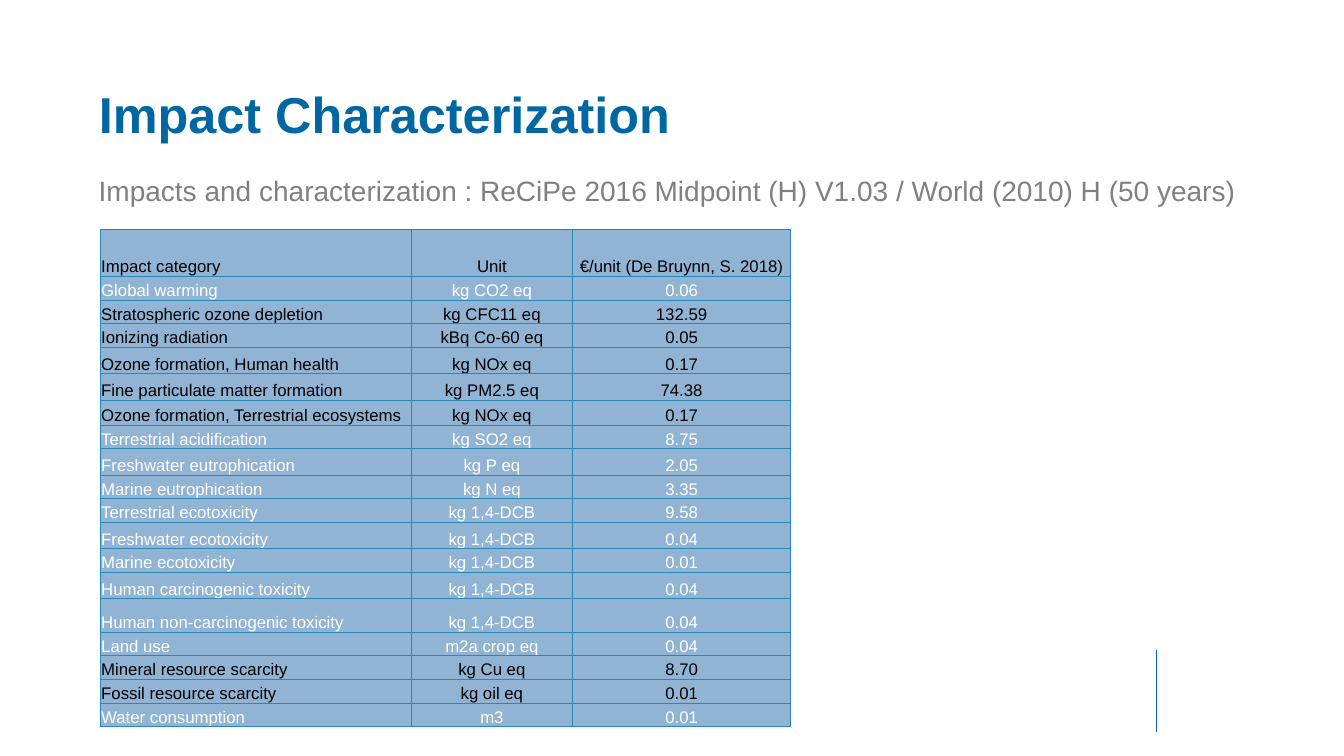
from lxml import etree
from pptx import Presentation, util as u
from pptx.dml.color import RGBColor
from pptx.enum import shapes, text
from pptx.oxml.ns import qn

BLACK, WHITE = "000000", "FFFFFF"
HEADER = ("Impact category", "Unit", "€/unit (De Bruynn, S. 2018)", 33.8, BLACK)
IMPACTS = [
    ("Global warming", "kg CO2 eq", "0.06", 16.9, WHITE),
    ("Stratospheric ozone depletion", "kg CFC11 eq", "132.59", 16.9, BLACK),
    ("Ionizing radiation", "kBq Co-60 eq", "0.05", 16.9, BLACK),
    ("Ozone formation, Human health", "kg NOx eq", "0.17", 18.8, BLACK),
    ("Fine particulate matter formation", "kg PM2.5 eq", "74.38", 18.8, BLACK),
    ("Ozone formation, Terrestrial ecosystems", "kg NOx eq", "0.17", 18, BLACK),
    ("Terrestrial acidification", "kg SO2 eq", "8.75", 16.9, WHITE),
    ("Freshwater eutrophication", "kg P eq", "2.05", 18.8, WHITE),
    ("Marine eutrophication", "kg N eq", "3.35", 16.9, WHITE),
    ("Terrestrial ecotoxicity", "kg 1,4-DCB", "9.58", 16.9, WHITE),
    ("Freshwater ecotoxicity", "kg 1,4-DCB", "0.04", 18.8, WHITE),
    ("Marine ecotoxicity", "kg 1,4-DCB", "0.01", 16.9, WHITE),
    ("Human carcinogenic toxicity", "kg 1,4-DCB", "0.04", 18.8, WHITE),
    ("Human non-carcinogenic toxicity", "kg 1,4-DCB", "0.04", 23.8, WHITE),
    ("Land use", "m2a crop eq", "0.04", 16.9, WHITE),
    ("Mineral resource scarcity", "kg Cu eq", "8.70", 16.9, BLACK),
    ("Fossil resource scarcity", "kg oil eq", "0.01", 16.9, BLACK),
    ("Water consumption", "m3", "0.01", 16.9, WHITE),
]


def colour(value):
    return RGBColor.from_string(value)


class SlideBuilder:
    """Draws styled elements on one slide, with lengths in points."""

    font = "Arial"
    blue, grey = "0067A3", "808080"
    cell_fill, cell_border = "92B4D4", "2A88B5"

    def __init__(self, slide):
        self.slide = slide

    def add_span(self, para, words, size, hue, bold=False, align=text.PP_ALIGN.LEFT):
        para.alignment = align
        span = para.add_run()
        span.text = words
        span.font.name, span.font.size = self.font, u.Pt(size)
        span.font.bold, span.font.color.rgb = bold, colour(hue)

    def fill_box(self, box, place, words, size, hue, bold=False):
        box.left, box.top, box.width, box.height = map(u.Pt, place)
        frame = box.text_frame
        frame.word_wrap = True
        frame.auto_size = text.MSO_AUTO_SIZE.NONE
        frame.vertical_anchor = text.MSO_ANCHOR.TOP
        para = frame.paragraphs[0]
        para.line_spacing, para.space_before = 0.9, u.Pt(0)
        self.add_span(para, words, size, hue, bold)

    def title(self, place, words):
        self.fill_box(self.slide.shapes.title, place, words, 36, self.blue, True)

    def subtitle(self, place, words):
        box = self.slide.shapes.add_textbox(*map(u.Pt, place))
        self.fill_box(box, place, words, 20, self.grey)

    def line(self, *ends):
        rule = self.slide.shapes.add_connector(
            shapes.MSO_CONNECTOR.STRAIGHT, *map(u.Pt, ends))
        rule.line.color.rgb, rule.line.width = colour(self.blue), u.Pt(0.5)
        etree.SubElement(rule._element.spPr, qn("a:effectLst"))

    def border(self, cell):
        properties = cell._tc.get_or_add_tcPr()
        for side in ("a:lnL", "a:lnR", "a:lnT", "a:lnB"):
            edge = etree.SubElement(properties, qn(side), w=str(u.Pt(0.5)))
            solid = etree.SubElement(edge, qn("a:solidFill"))
            etree.SubElement(solid, qn("a:srgbClr"), val=self.cell_border)

    def cell(self, cell, words, hue, align):
        self.border(cell)
        cell.fill.solid()
        cell.fill.fore_color.rgb = colour(self.cell_fill)
        cell.margin_left = cell.margin_right = cell.margin_top = u.Pt(0.7)
        cell.margin_bottom = u.Pt(0)
        cell.vertical_anchor = text.MSO_ANCHOR.BOTTOM
        self.add_span(cell.text_frame.paragraphs[0], words, 12, hue, align=align)

    def table(self, left, top, widths, rows):
        height = sum(row[3] for row in rows)
        grid = self.slide.shapes.add_table(
            len(rows), len(widths), u.Pt(left), u.Pt(top),
            u.Pt(sum(widths)), u.Pt(height)).table
        for column, width in zip(grid.columns, widths):
            column.width = u.Pt(width)
        for index, (*words, row_height, hue) in enumerate(rows):
            grid.rows[index].height = u.Pt(row_height)
            for place, word in enumerate(words):
                align = text.PP_ALIGN.CENTER if place else text.PP_ALIGN.LEFT
                self.cell(grid.cell(index, place), word, hue, align)


def main():
    deck = Presentation()
    deck.slide_width, deck.slide_height = u.Pt(960), u.Pt(540)
    page = SlideBuilder(deck.slides.add_slide(deck.slide_layouts[5]))
    page.line(826, 464, 826, 523)
    page.title((63.4, 60.5, 850, 44.6), "Impact Characterization")
    page.subtitle(
        (63.4, 123.1, 850, 356.4),
        "Impacts and characterization : ReCiPe 2016 Midpoint (H) V1.03 / World (2010) H (50 years)")
    page.table(71.6, 163.6, (222.3, 115, 156), [HEADER] + IMPACTS)
    deck.save("out.pptx")


if __name__ == "__main__":
    main()
